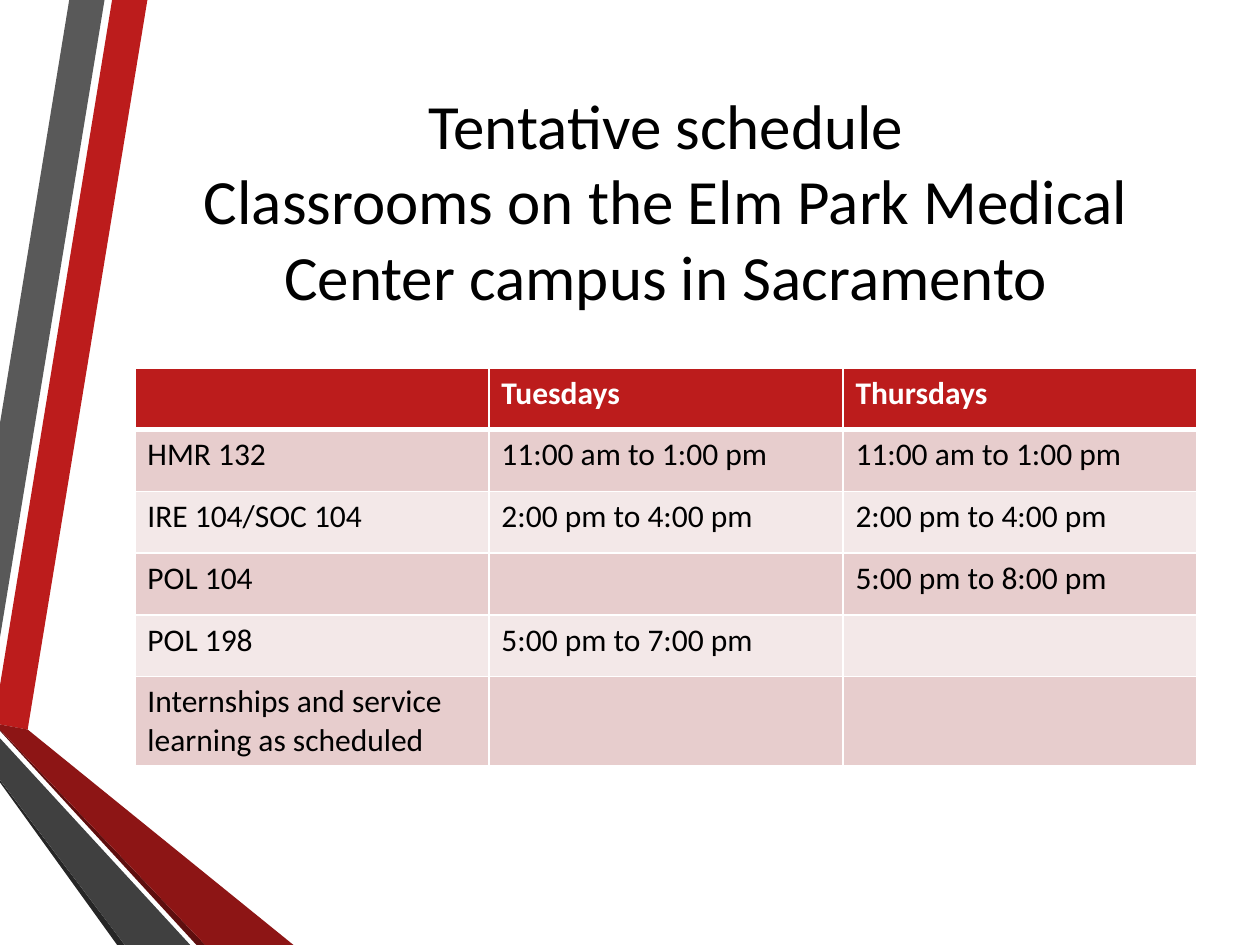
from lxml import etree
from pptx import Presentation
from pptx import util as u
from pptx.dml.color import RGBColor
from pptx.enum import text
from pptx.oxml.ns import qn

WIDTH, HEIGHT = 10, 7.5
LEFT, CONTENT_WIDTH = 1.07, 8.43
UNITS_PER_INCH = 100
FONT = "Calibri"
COLORS = {
    "red": "BC1C1C", "dark red": "8D1515", "deep red": "5E0E0E",
    "gray": "595959", "dark gray": "404040", "deep gray": "262626",
    "rose": "E7CDCD", "pale rose": "F3E8E8",
    "white": "FFFFFF", "black": "000000",
}
RIBBONS = [
    ("red", [(0, 5.44), (0, 5.75), (0.22, 5.79), (1.17, 0), (0.89, 0)]),
    ("gray", [(0.83, 0), (0.55, 0), (0, 3.36), (0, 5.06)]),
    ("deep gray", [(0, 6.19), (0, 6.21), (0.93, HEIGHT), (0.99, HEIGHT)]),
    ("deep red", [(0, 5.79), (0, 5.8), (1.56, HEIGHT), (1.63, HEIGHT)]),
    ("dark red", [(0, 5.79), (1.63, HEIGHT), (2.33, HEIGHT), (0.22, 5.79), (0, 5.75)]),
    ("dark gray", [(0, 6.19), (0.99, HEIGHT), (1.51, HEIGHT), (0, 5.86)]),
]
TITLE = "Tentative schedule\vClassrooms on the Elm Park Medical Center campus in Sacramento"
SCHEDULE = [
    ("", "Tuesdays", "Thursdays"),
    ("HMR 132", "11:00 am to 1:00 pm", "11:00 am to 1:00 pm"),
    ("IRE 104/SOC 104", "2:00 pm to 4:00 pm", "2:00 pm to 4:00 pm"),
    ("POL 104", "", "5:00 pm to 8:00 pm"),
    ("POL 198", "5:00 pm to 7:00 pm", ""),
    ("Internships and service learning as scheduled", "", ""),
]
ROW_HEIGHT, LAST_ROW_HEIGHT = 0.49, 0.71


def rgb(name):
    return RGBColor.from_string(COLORS[name])


def format_runs(para, size, color, bold=False):
    for span in para.runs:
        span.font.name = FONT
        span.font.size = u.Pt(size)
        span.font.bold = bold
        span.font.color.rgb = rgb(color)


def add_ribbon(page, color, points):
    """Draw a filled outline; the builder needs whole units, so inches are scaled up."""
    start, *rest = [(round(x * UNITS_PER_INCH), round(y * UNITS_PER_INCH)) for x, y in points]
    builder = page.shapes.build_freeform(*start, scale=u.Inches(1) / UNITS_PER_INCH)
    builder.add_line_segments(rest, close=True)
    ribbon = builder.convert_to_shape()
    ribbon.shadow.inherit = False
    ribbon.fill.solid()
    ribbon.fill.fore_color.rgb = rgb(color)
    ribbon.line.fill.background()


def add_title(page):
    box = page.shapes.add_textbox(*map(u.Inches, (LEFT, 0.5, CONTENT_WIDTH, 2.17)))
    frame = box.text_frame
    frame.word_wrap = True
    frame.vertical_anchor = text.MSO_ANCHOR.MIDDLE
    para = frame.paragraphs[0]
    para.text = TITLE
    para.alignment = text.PP_ALIGN.CENTER
    format_runs(para, 36, "black")


def set_borders(cell, top, bottom):
    """Draw white cell borders; top and bottom are widths in points."""
    properties = cell._tc.get_or_add_tcPr()
    for side, width in (("L", 1), ("R", 1), ("T", top), ("B", bottom)):
        line = etree.SubElement(properties, qn(f"a:ln{side}"), w=str(u.Pt(width)))
        fill = etree.SubElement(line, qn("a:solidFill"))
        etree.SubElement(fill, qn("a:srgbClr"), val=COLORS["white"])


def fill_cell(cell, wording, row):
    header = row == 0
    set_borders(cell, top=3 if row == 1 else 1, bottom=3 if header else 1)
    cell.fill.solid()
    cell.fill.fore_color.rgb = rgb("red" if header else "rose" if row % 2 else "pale rose")
    para = cell.text_frame.paragraphs[0]
    para.text = wording
    format_runs(para, 18, "white" if header else "black", bold=header)


def add_schedule(page):
    rows, columns = len(SCHEDULE), len(SCHEDULE[0])
    height = ROW_HEIGHT * (rows - 1) + LAST_ROW_HEIGHT
    area = map(u.Inches, (LEFT, 2.92, CONTENT_WIDTH, height))
    table = page.shapes.add_table(rows, columns, *area).table
    for column in table.columns:
        column.width = u.Inches(CONTENT_WIDTH / columns)
    for row, entries in enumerate(SCHEDULE):
        last = row == rows - 1
        table.rows[row].height = u.Inches(LAST_ROW_HEIGHT if last else ROW_HEIGHT)
        for column, wording in enumerate(entries):
            fill_cell(table.cell(row, column), wording, row)


def main():
    deck = Presentation()
    deck.slide_width, deck.slide_height = u.Inches(WIDTH), u.Inches(HEIGHT)
    page = deck.slides.add_slide(deck.slide_layouts[6])
    for color, points in RIBBONS:
        add_ribbon(page, color, points)
    add_title(page)
    add_schedule(page)
    deck.save("out.pptx")


if __name__ == "__main__":
    main()
